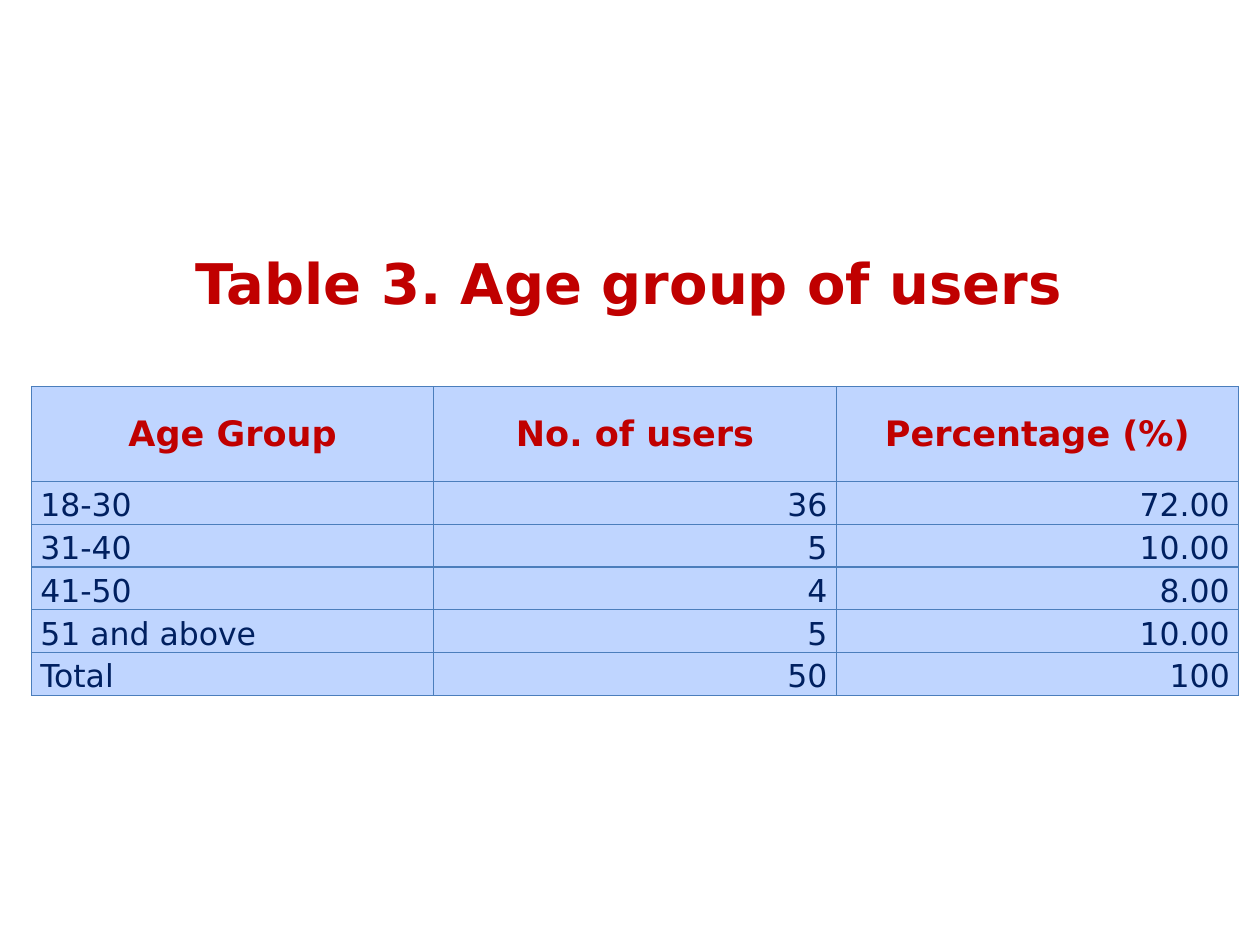
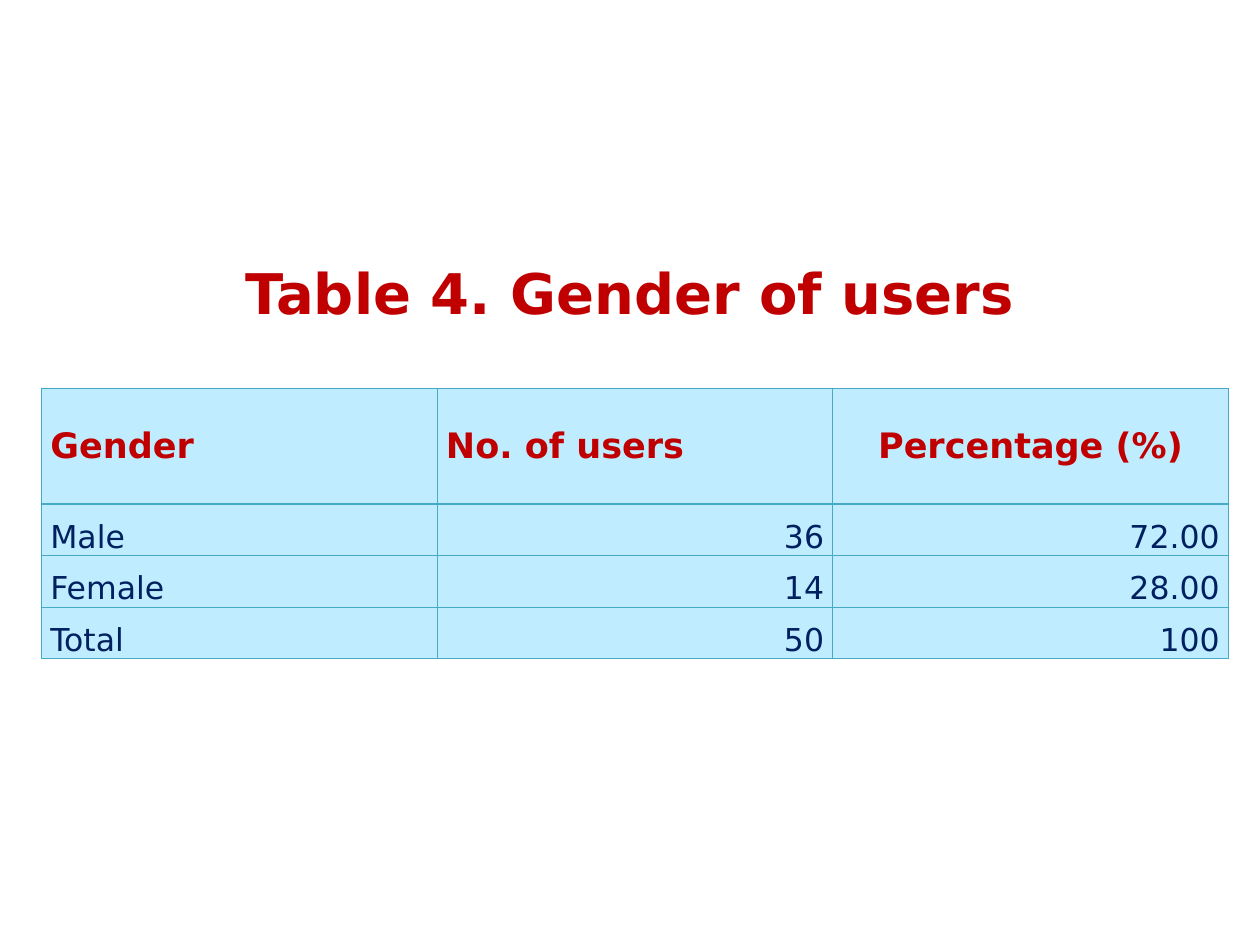
import pptx
import pptx.dml.color
import pptx.enum.text
import pptx.oxml
import pptx.oxml.ns
import pptx.util
from pptx.util import Inches

FONT = "DejaVu Sans"
RED = "C00000"
NAVY = "002060"
ALIGN = pptx.enum.text.PP_ALIGN
ANCHOR = pptx.enum.text.MSO_ANCHOR
LEFT, CENTER, RIGHT = ALIGN.LEFT, ALIGN.CENTER, ALIGN.RIGHT
TITLE_ONLY_LAYOUT = 5


def color(value):
    return pptx.dml.color.RGBColor.from_string(value)


def write(frame, text, size=18, ink=NAVY, bold=False, align=LEFT):
    para = frame.paragraphs[0]
    para.alignment = align
    span = para.add_run()
    span.text = text
    span.font.name = FONT
    span.font.size = pptx.util.Pt(size)
    span.font.bold = bold
    span.font.color.rgb = color(ink)


def add_title(page, text, left, top, width, height):
    title = page.shapes.title
    title.left, title.top = Inches(left), Inches(top)
    title.width, title.height = Inches(width), Inches(height)
    frame = title.text_frame
    frame.word_wrap = True
    frame.auto_size = pptx.enum.text.MSO_AUTO_SIZE.NONE
    frame.vertical_anchor = ANCHOR.MIDDLE
    write(frame, text, size=32, ink=RED, bold=True, align=CENTER)


def style_cell(cell, fill, border, anchor):
    cell.margin_left = cell.margin_right = Inches(0.07)
    cell.margin_top = cell.margin_bottom = 0
    cell.vertical_anchor = anchor
    properties = cell._tc.get_or_add_tcPr()
    for side in "LRTB":
        properties.append(pptx.oxml.parse_xml(
            f'<a:ln{side} {pptx.oxml.ns.nsdecls("a")} w="{pptx.util.Pt(0.75)}">'
            f'<a:solidFill><a:srgbClr val="{border}"/></a:solidFill></a:ln{side}>'))
    cell.fill.solid()
    cell.fill.fore_color.rgb = color(fill)


def add_user_table(page, rows, left, top, width, header_height, row_height,
                   header_aligns, fill, border):
    columns = len(rows[0])
    height = header_height + row_height * (len(rows) - 1)
    table = page.shapes.add_table(len(rows), columns, Inches(left), Inches(top),
                                  Inches(width), Inches(height)).table
    table.first_row = table.horz_banding = False
    for column in table.columns:
        column.width = Inches(width / columns)
    for row_index, texts in enumerate(rows):
        header = row_index == 0
        table.rows[row_index].height = Inches(header_height if header else row_height)
        for column_index, text in enumerate(texts):
            cell = table.cell(row_index, column_index)
            style_cell(cell, fill, border, ANCHOR.MIDDLE if header else ANCHOR.BOTTOM)
            if header:
                write(cell.text_frame, text, size=20, ink=RED, bold=True,
                      align=header_aligns[column_index])
            else:
                write(cell.text_frame, text, align=RIGHT if column_index else LEFT)


def add_table_page(deck, title, title_box, rows, **table_format):
    page = deck.slides.add_slide(deck.slide_layouts[TITLE_ONLY_LAYOUT])
    add_title(page, title, *title_box)
    add_user_table(page, rows, **table_format)


def main():
    deck = pptx.Presentation()
    deck.slide_width, deck.slide_height = Inches(10), Inches(7.5)
    add_table_page(
        deck, "Table 3. Age group of users", (1.33, 1.92, 7.33, 0.64),
        [("Age Group", "No. of users", "Percentage (%)"),
         ("18-30", "36", "72.00"),
         ("31-40", "5", "10.00"),
         ("41-50", "4", "8.00"),
         ("51 and above", "5", "10.00"),
         ("Total", "50", "100")],
        left=0.25, top=3.07, width=9.58, header_height=0.75, row_height=0.34,
        header_aligns=(CENTER, CENTER, CENTER), fill="BFD5FF", border="4B7EBC")
    add_table_page(
        deck, "Table 4. Gender of users", (1.5, 2, 7, 0.64),
        [("Gender", "No. of users", "Percentage (%)"),
         ("Male", "36", "72.00"),
         ("Female", "14", "28.00"),
         ("Total", "50", "100")],
        left=0.33, top=3.08, width=9.42, header_height=0.92, row_height=0.41,
        header_aligns=(LEFT, LEFT, CENTER), fill="BFECFF", border="46AAC5")
    deck.save("out.pptx")


if __name__ == "__main__":
    main()
